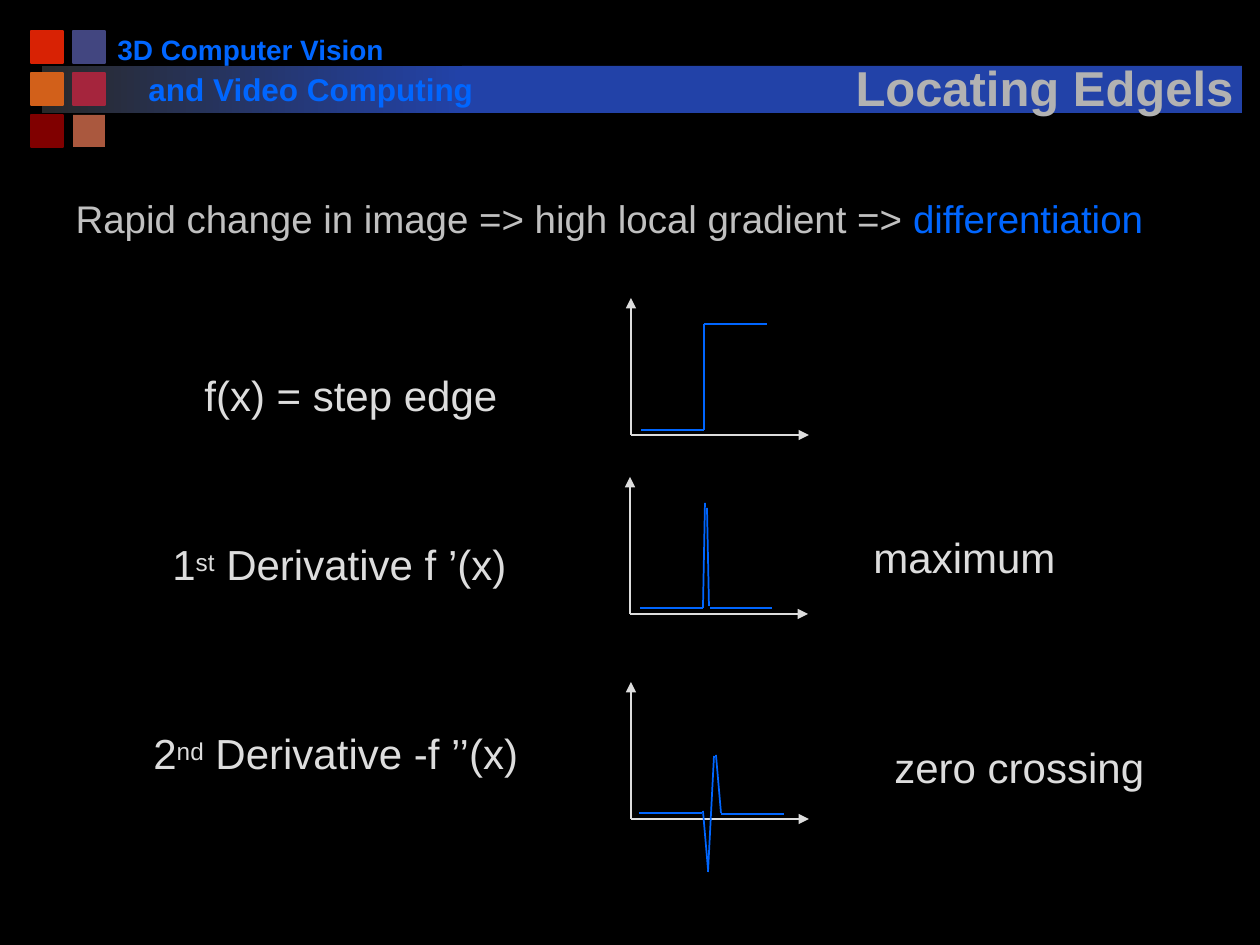
from lxml.etree import SubElement
from pptx import Presentation
from pptx.dml.color import RGBColor
from pptx.enum.shapes import MSO_CONNECTOR, MSO_SHAPE
from pptx.enum.text import MSO_ANCHOR, MSO_AUTO_SIZE, PP_ALIGN
from pptx.oxml import parse_xml
from pptx.oxml.ns import nsdecls, qn
from pptx.util import Pt

PX = 914400 / 126
BLACK = RGBColor(0x00, 0x00, 0x00)
BLUE = RGBColor(0x00, 0x66, 0xFF)
LIGHT = RGBColor(0xDD, 0xDD, 0xDD)
SILVER = RGBColor(0xC0, 0xC0, 0xC0)
TITLE_GRAY = RGBColor(0xB2, 0xB2, 0xB2)
BAR_DARK = RGBColor(0x29, 0x29, 0x29)
BAR_BLUE = RGBColor(0x22, 0x42, 0xA8)
RED = RGBColor(0xD8, 0x22, 0x04)
INDIGO = RGBColor(0x42, 0x46, 0x80)
ORANGE = RGBColor(0xD2, 0x60, 0x1A)
CRIMSON = RGBColor(0xA5, 0x25, 0x3D)
MAROON = RGBColor(0x80, 0x00, 0x00)
COPPER = RGBColor(0xAA, 0x58, 0x3E)

SQUARES = [(RED, INDIGO), (ORANGE, CRIMSON), (MAROON, COPPER)]
PLOTS = [
    ((631, 435), [(10, -5, 73, -5), (73, -111, 136, -111), (73, -111, 73, -5)]),
    ((630, 614), [(10, -6, 73, -6), (80, -6, 142, -6),
                  (75, -111, 73, -6), (77, -106, 79, -8)]),
    ((631, 819), [(8, -6, 71, -6), (90, -5, 153, -5), (83, -63, 77, 53),
                  (72, -8, 77, 50), (85, -64, 90, -6)]),
]
LABELS = [
    ((192, 363, 319, 63), [("f(x) = step edge", 0)]),
    ((160, 532, 363, 63), [("1", 0), ("st", 20), (" Derivative f ’(x)", 0)]),
    ((141, 721, 396, 63), [("2", 0), ("nd", 20), (" Derivative -f ’’(x)", 0)]),
    ((861, 525, 208, 63), [("maximum", 0)]),
    ((882, 735, 276, 63), [("zero crossing", 0)]),
]


def emu(*lengths):
    """Turn px lengths into EMU."""
    return [round(length * PX) for length in lengths]


def set_all(target, **values):
    """Set attributes of an object from format values."""
    for name, value in values.items():
        setattr(target, name, value)


def place(shape, box):
    """Move and size a shape to a px box."""
    set_all(shape, **dict(zip(("left", "top", "width", "height"), emu(*box))))


def add_run(paragraph, text, size, color, bold=False, baseline=0):
    """Append a formatted run to a paragraph."""
    run = paragraph.add_run()
    run.text = text
    set_all(run.font, size=Pt(size), name="Arial", bold=bold)
    run.font.color.rgb = color
    if baseline:
        run.font._element.set("baseline", str(baseline * 1000))
    return run


def add_label(slide, box, parts, size, color, bold=False):
    """Add a one-line text box made of (text, baseline) parts."""
    shape = slide.shapes.add_textbox(*emu(*box))
    set_all(shape.text_frame, word_wrap=False, auto_size=MSO_AUTO_SIZE.SHAPE_TO_FIT_TEXT)
    for text, baseline in parts:
        add_run(shape.text_frame.paragraphs[0], text, size, color, bold, baseline)


def add_block(slide, box, color):
    """Add a plain rectangle without outline."""
    shape = slide.shapes.add_shape(MSO_SHAPE.RECTANGLE, *emu(*box))
    shape.shadow.inherit = False
    shape.fill.solid()
    shape.fill.fore_color.rgb = color
    shape.line.fill.background()
    return shape


def add_line(slide, origin, segment, color, arrow=False):
    """Add a straight line given relative to an origin."""
    left, top = origin
    x1, y1, x2, y2 = segment
    line = slide.shapes.add_connector(
        MSO_CONNECTOR.STRAIGHT, *emu(left + x1, top + y1, left + x2, top + y2))
    line.line.width = Pt(1)
    line.line.color.rgb = color
    if arrow:
        SubElement(line.line._get_or_add_ln(), qn("a:tailEnd"), type="triangle")
    SubElement(line._element.spPr, qn("a:effectLst"))


def add_header(slide, left, top):
    """Draw the title bar, the colour squares and the course name."""
    bar = add_block(slide, (left + 11, top + 35, 420, 47), BAR_BLUE)
    bar.fill.gradient()
    bar.fill.gradient_angle = 0
    for stop, color in zip(bar.fill.gradient_stops, (BAR_DARK, BAR_BLUE)):
        stop.color.rgb = color
    for row, colors in enumerate(SQUARES):
        for column, color in enumerate(colors):
            square = add_block(slide, (left + 42 * column, top + 42 * row, 32, 32), color)
            if color != COPPER:
                square.line.width = Pt(1)
                square.line.color.rgb = color
    add_block(slide, (left + 431, top + 35, 780, 47), BAR_BLUE)
    add_label(slide, (left + 74, top - 5, 292, 47), [("3D Computer Vision", 0)], 16, BLUE, True)
    add_label(slide, (left + 105, top + 33, 357, 50), [("and Video Computing", 0)], 18, BLUE, True)


def add_title(slide, box):
    """Fill the title placeholder and bring it in front of the bar."""
    title = slide.shapes.title
    place(title, box)
    set_all(title.text_frame, vertical_anchor=MSO_ANCHOR.BOTTOM, word_wrap=True,
            auto_size=MSO_AUTO_SIZE.NONE)
    paragraph = title.text_frame.paragraphs[0]
    paragraph.alignment = PP_ALIGN.CENTER
    run = add_run(paragraph, "Locating Edgels", 28, TITLE_GRAY, True)
    shadow = parse_xml(
        f'<a:effectLst {nsdecls("a")}><a:outerShdw dist="38100" dir="2700000">'
        '<a:srgbClr val="000000"/></a:outerShdw></a:effectLst>')
    run.font._element.find(qn("a:solidFill")).addnext(shadow)
    title.element.getparent().append(title.element)


def add_statement(slide, box):
    """Fill the body placeholder with the opening statement."""
    body = slide.placeholders[1]
    place(body, box)
    set_all(body.text_frame, vertical_anchor=MSO_ANCHOR.TOP, auto_size=MSO_AUTO_SIZE.NONE)
    paragraph = body.text_frame.paragraphs[0]
    set_all(paragraph, space_before=Pt(4), alignment=PP_ALIGN.LEFT)
    properties = paragraph._p.get_or_add_pPr()
    indent, = emu(48)
    properties.set("marL", str(indent))
    properties.set("indent", str(-indent))
    SubElement(properties, qn("a:buNone"))
    add_run(paragraph, "Rapid change in image => high local gradient => ", 22, SILVER)
    add_run(paragraph, "differentiation", 22, BLUE)


def add_plot(slide, origin, segments):
    """Draw the two axes and the curve from the plot's origin."""
    for axis in ((0, 0, 0, -137), (0, 0, 178, 0)):
        add_line(slide, origin, axis, LIGHT, arrow=True)
    for segment in segments:
        add_line(slide, origin, segment, BLUE)


def main():
    """Build the slide and save it."""
    presentation = Presentation()
    set_all(presentation, **dict(zip(("slide_width", "slide_height"), emu(1260, 945))))
    slide = presentation.slides.add_slide(presentation.slide_layouts[1])
    slide.background.fill.solid()
    slide.background.fill.fore_color.rgb = BLACK
    add_header(slide, 31, 31)
    add_title(slide, (839, 39, 411, 84))
    add_statement(slide, (63, 189, 1144, 63))
    for origin, segments in PLOTS:
        add_plot(slide, origin, segments)
    for box, parts in LABELS:
        add_label(slide, box, parts, 24, LIGHT)
    presentation.save("out.pptx")


if __name__ == "__main__":
    main()
